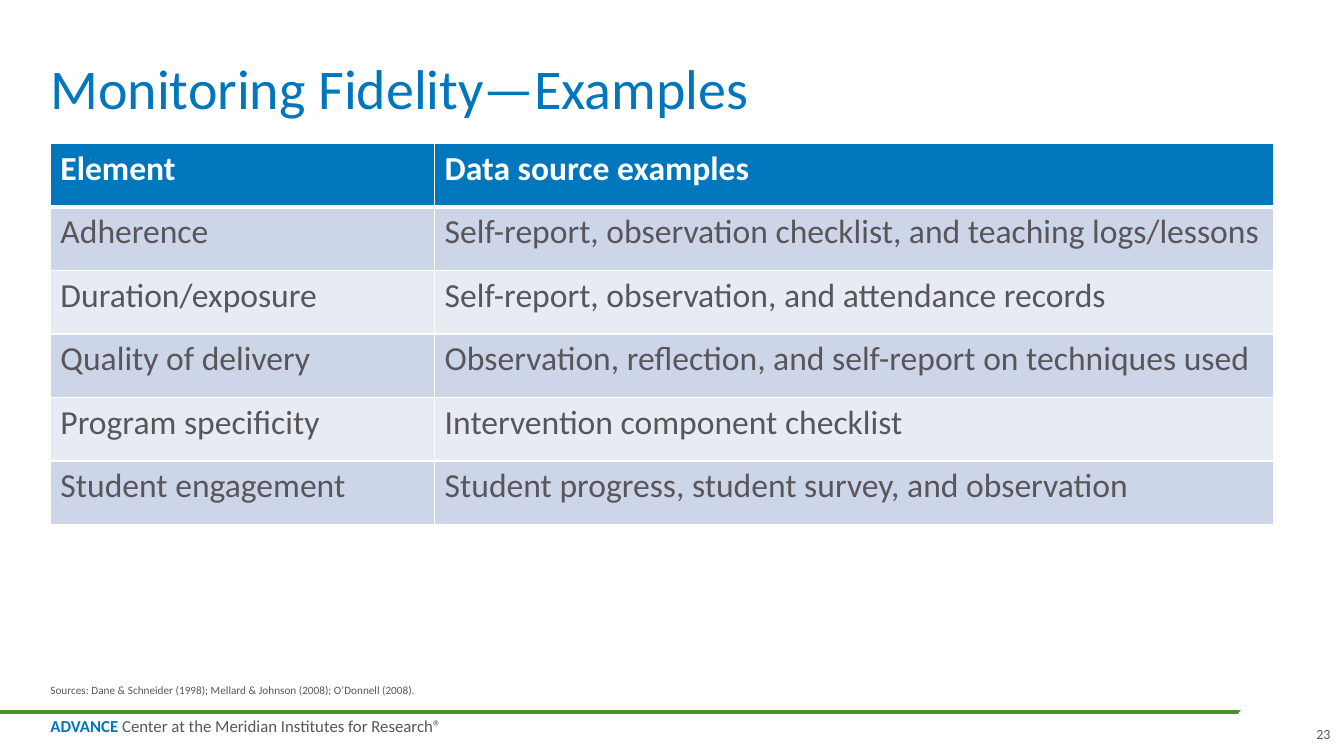
from lxml import etree
from pptx import Presentation
from pptx.dml.color import RGBColor
from pptx.enum import shapes, text
from pptx.oxml import ns
from pptx.util import Pt

HUES = {"blue": "0076BD", "gray": "59565A", "green": "4C902D",
        "white": "FFFFFF", "dark": "CCD6E8", "light": "E7ECF4"}
ROWS = [
    ("Element", "Data source examples"),
    ("Adherence", "Self-report, observation checklist, and teaching logs/lessons"),
    ("Duration/exposure", "Self-report, observation, and attendance records"),
    ("Quality of delivery", "Observation, reflection, and self-report on techniques used"),
    ("Program specificity", "Intervention component checklist"),
    ("Student engagement", "Student progress, student survey, and observation"),
]
LEFT = 36


def hue(name):
    return RGBColor.from_string(HUES[name])


def apply(item, form):
    for key, value in form.items():
        setattr(item, key, value)


def place(shape, box):
    apply(shape, dict(zip(("left", "top", "width", "height"), map(Pt, box))))


def write(frame, runs, size, form):
    """Fill a frame's first paragraph with (words, colour, bold) runs."""
    para = frame.paragraphs[0]
    apply(para, form)
    for words, tint, bold in runs:
        run = para.add_run()
        run.text = words
        apply(run.font, {"name": "Calibri", "size": Pt(size), "bold": bold})
        run.font.color.rgb = hue(tint)


def bare(frame, anchor):
    apply(frame, {"word_wrap": True, "vertical_anchor": anchor,
                  "auto_size": text.MSO_AUTO_SIZE.NONE,
                  "margin_left": 0, "margin_right": 0,
                  "margin_top": 0, "margin_bottom": 0})


def label(slide, box, runs, size, anchor=text.MSO_ANCHOR.BOTTOM, **form):
    note = slide.shapes.add_textbox(*map(Pt, box))
    bare(note.text_frame, anchor)
    write(note.text_frame, runs, size, form)


def heading(slide, box):
    title = slide.shapes.title
    place(title, box)
    bare(title.text_frame, text.MSO_ANCHOR.BOTTOM)
    write(title.text_frame, [("Monitoring Fidelity—Examples", "blue", False)], 40,
          {"alignment": text.PP_ALIGN.LEFT, "line_spacing": 0.9})


def border(cell, last):
    """Draw white cell edges, with the given width below."""
    props = cell._tc.get_or_add_tcPr()
    for spot, (side, width) in enumerate(zip("LRTB", (1, 1, 1, last))):
        edge = etree.Element(ns.qn("a:ln" + side), w=str(Pt(width)))
        fill = etree.SubElement(edge, ns.qn("a:solidFill"))
        etree.SubElement(fill, ns.qn("a:srgbClr"), val=HUES["white"])
        props.insert(spot, edge)


def grid(slide, box):
    table = slide.shapes.add_table(len(ROWS), 2, *map(Pt, box)).table
    first = 274.5
    for col, width in zip(table.columns, (first, box[2] - first)):
        col.width = Pt(width)
    for r, row in enumerate(ROWS):
        table.rows[r].height = Pt(box[3] / len(ROWS))
        head = r == 0
        shade = "blue" if head else ("light", "dark")[r % 2]
        for c, words in enumerate(row):
            cell = table.cell(r, c)
            cell.fill.solid()
            cell.fill.fore_color.rgb = hue(shade)
            border(cell, 3 if head else 1)
            write(cell.text_frame, [(words, "white" if head else "gray", head)], 24, {})


def footer(slide, box):
    left, top, width, height = box
    # Green rule with a slanted end
    rule = slide.shapes.add_connector(
        shapes.MSO_CONNECTOR.STRAIGHT, Pt(left), Pt(top), Pt(left + 936), Pt(top))
    rule.line.color.rgb = hue("green")
    rule.line.width = Pt(3)
    etree.SubElement(rule._element.spPr, ns.qn("a:effectLst"))
    mask = slide.shapes.add_shape(
        shapes.MSO_SHAPE.OVAL, Pt(left + 875.5), Pt(top - 20.9), Pt(85.7), Pt(41.8))
    mask.rotation = 332.1
    mask.shadow.inherit = False
    mask.fill.solid()
    mask.fill.fore_color.rgb = hue("white")
    mask.line.fill.background()
    # Center name and page number
    label(slide, (left + LEFT, top + 5, 400, 12.5),
          [("ADVANCE", "blue", True),
           (" Center at the Meridian Institutes for Research®", "gray", False)],
          12, text.MSO_ANCHOR.TOP, line_spacing=0.85)
    label(slide, (left + width - 39.6, top + 10, 30, 12.2), [("23", "gray", False)],
          10, alignment=text.PP_ALIGN.RIGHT)


def main():
    deck = Presentation()
    apply(deck, {"slide_width": Pt(960), "slide_height": Pt(540)})
    slide = deck.slides.add_slide(deck.slide_layouts[5])
    footer(slide, (0, 508.4, 960, 31.6))
    heading(slide, (LEFT, 0, 893, 87))
    label(slide, (LEFT, 483, 893, 15),
          [("Sources: Dane & Schneider (1998); Mellard & Johnson (2008); "
            "O’Donnell (2008).", "gray", False)], 8)
    grid(slide, (LEFT, 102.4, 874, 272.4))
    deck.save("out.pptx")


if __name__ == "__main__":
    main()
